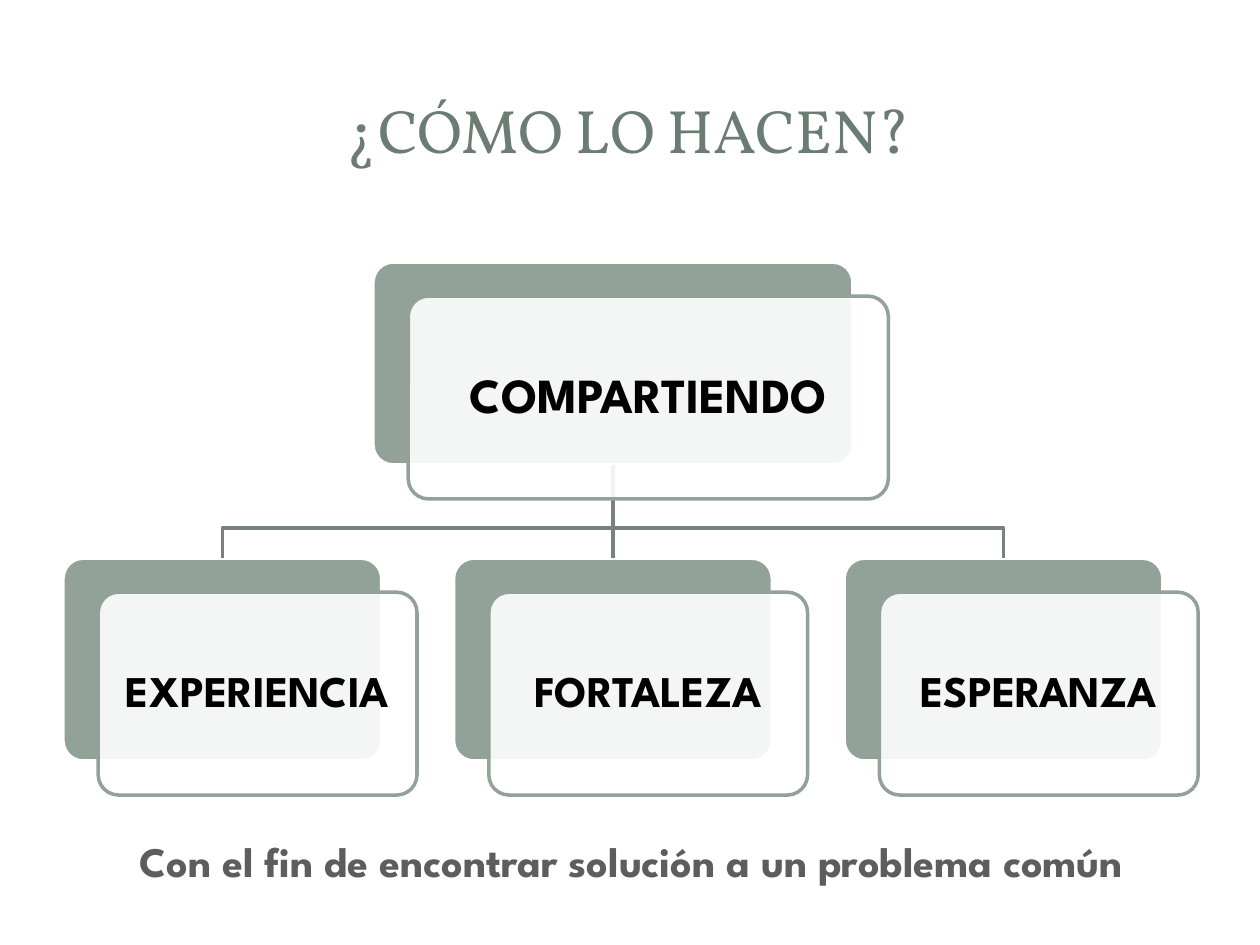
from lxml.etree import SubElement
from pptx import Presentation
from pptx.dml.color import RGBColor
from pptx.enum.shapes import MSO_CONNECTOR, MSO_SHAPE
from pptx.enum.text import MSO_ANCHOR, PP_ALIGN
from pptx.oxml.ns import qn
from pptx.util import Inches, Pt

WHITE = RGBColor(0xFF, 0xFF, 0xFF)
BLACK = RGBColor(0x00, 0x00, 0x00)
SAGE = RGBColor(0x93, 0xA2, 0x99)
TITLE_GREEN = RGBColor(0x6B, 0x7D, 0x72)
LINE_GRAY = RGBColor(0x76, 0x82, 0x7B)
CLOSING_GRAY = RGBColor(0x5D, 0x5D, 0x5D)
BODY_FONT = "League Spartan"

CARD_HEIGHT = 1.61
PARENT_WIDTH, CHILD_WIDTH = 3.81, 2.53
PARENT_TOP, CHILD_TOP = 2.08, 4.43
FIRST_COLUMN, COLUMN_STEP = 0.5, 3.1
FRONT_SHIFT_X, FRONT_SHIFT_Y = 0.28, 0.27
BRANCH_Y = 4.19


def add_card(left, top, width, fill, line):
    card = slide.shapes.add_shape(
        MSO_SHAPE.ROUNDED_RECTANGLE,
        Inches(left), Inches(top), Inches(width), Inches(CARD_HEIGHT))
    card.adjustments[0] = 0.1
    card.shadow.inherit = False
    card.fill.solid()
    card.fill.fore_color.rgb = fill
    card.line.color.rgb = line
    card.line.width = Pt(2)
    return card


def style_text(shape, text, size, color, font=BODY_FONT, bold=True):
    shape.text_frame.vertical_anchor = MSO_ANCHOR.MIDDLE
    para = shape.text_frame.paragraphs[0]
    para.text = text
    para.alignment = PP_ALIGN.CENTER
    para.font.name = font
    para.font.size = Pt(size)
    para.font.bold = bold
    para.font.color.rgb = color
    return para


deck = Presentation()
deck.slide_width, deck.slide_height = Inches(10), Inches(7.5)
slide = deck.slides.add_slide(deck.slide_layouts[5])

title = slide.shapes.title
title.left, title.top = Inches(0.47), Inches(0.45)
title.width, title.height = Inches(9.03), Inches(1.14)
style_text(title, "¿CÓMO LO HACEN?", 35, TITLE_GREEN, "Vollkorn", False)

# Each card: label, left, top, width, text size, inset; the parent sits over the middle column
middle = FIRST_COLUMN + COLUMN_STEP + CHILD_WIDTH / 2
cards = [("COMPARTIENDO", middle - PARENT_WIDTH / 2, PARENT_TOP, PARENT_WIDTH, 28, 0.12)]
for column, label in enumerate(["EXPERIENCIA", "FORTALEZA", "ESPERANZA"]):
    cards.append((label, FIRST_COLUMN + column * COLUMN_STEP, CHILD_TOP, CHILD_WIDTH, 25, 0.1))

parent, *children = [add_card(left, top, width, SAGE, WHITE)
                     for label, left, top, width, size, inset in cards]

# Branches lie over the back cards and under the translucent front cards
trunk = slide.shapes.add_connector(MSO_CONNECTOR.STRAIGHT, 0, 0, 0, 0)
trunk.begin_connect(parent, 2)
trunk.end_connect(children[1], 0)
SubElement(trunk._element.spPr, qn("a:effectLst"))
branches = [trunk]
for child in (children[0], children[2]):
    child_middle = child.left + child.width // 2
    builder = slide.shapes.build_freeform(
        Inches(middle), Inches(PARENT_TOP + CARD_HEIGHT))
    builder.add_line_segments(
        [(Inches(middle), Inches(BRANCH_Y)),
         (child_middle, Inches(BRANCH_Y)),
         (child_middle, child.top)], close=False)
    branch = builder.convert_to_shape()
    branch.shadow.inherit = False
    branch.fill.background()
    branches.append(branch)
for branch in branches:
    branch.line.color.rgb = LINE_GRAY
    branch.line.width = Pt(2)

for label, left, top, width, size, inset in cards:
    front = add_card(left + FRONT_SHIFT_X, top + FRONT_SHIFT_Y, width, WHITE, SAGE)
    color = front._element.spPr.find(qn("a:solidFill"))[0]
    SubElement(color, qn("a:alpha"), val="90000")
    frame = front.text_frame
    frame.word_wrap = True
    frame.margin_left = frame.margin_right = Inches(inset)
    frame.margin_top = frame.margin_bottom = Inches(inset)
    style_text(front, label, size, BLACK).line_spacing = 0.9

closing = slide.shapes.add_textbox(Inches(0.45), Inches(6.58), Inches(9.12), Inches(0.5))
closing.text_frame.word_wrap = False
style_text(closing, "Con el fin de encontrar solución a un problema común", 24, CLOSING_GRAY)

deck.save("out.pptx")
